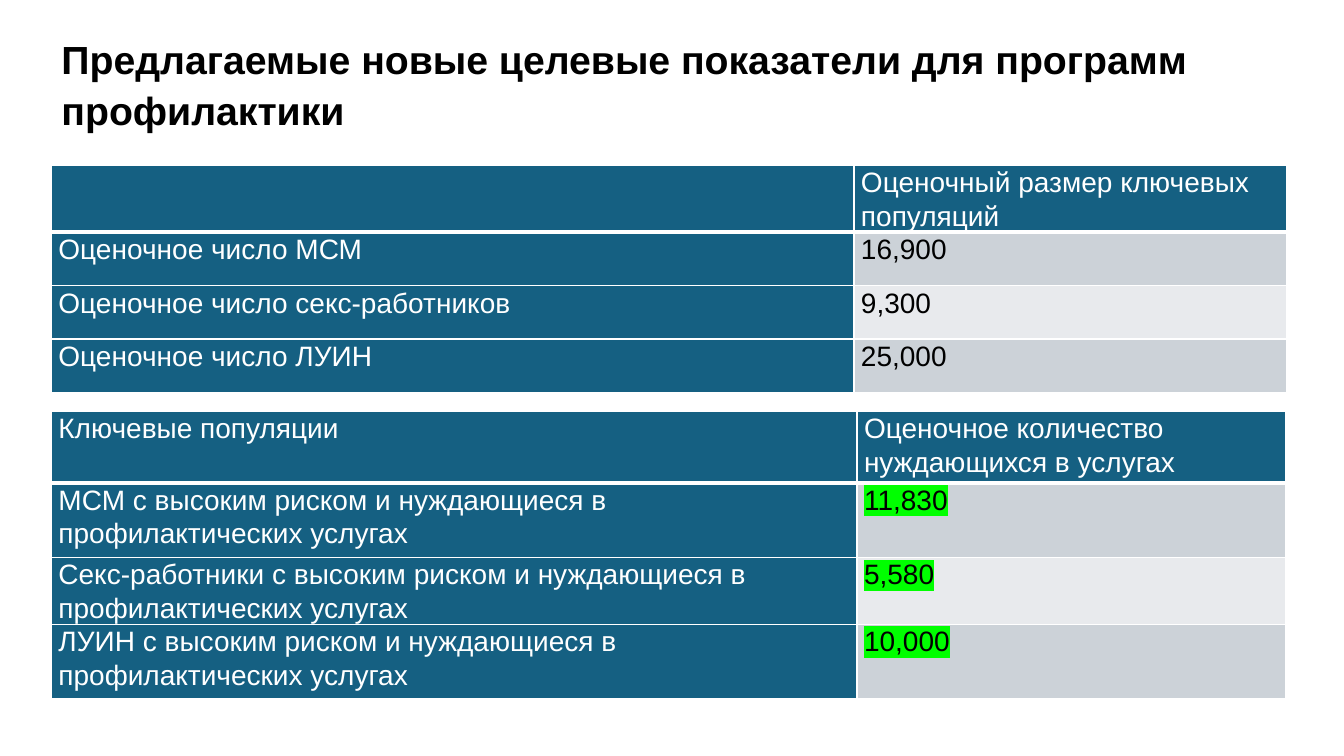
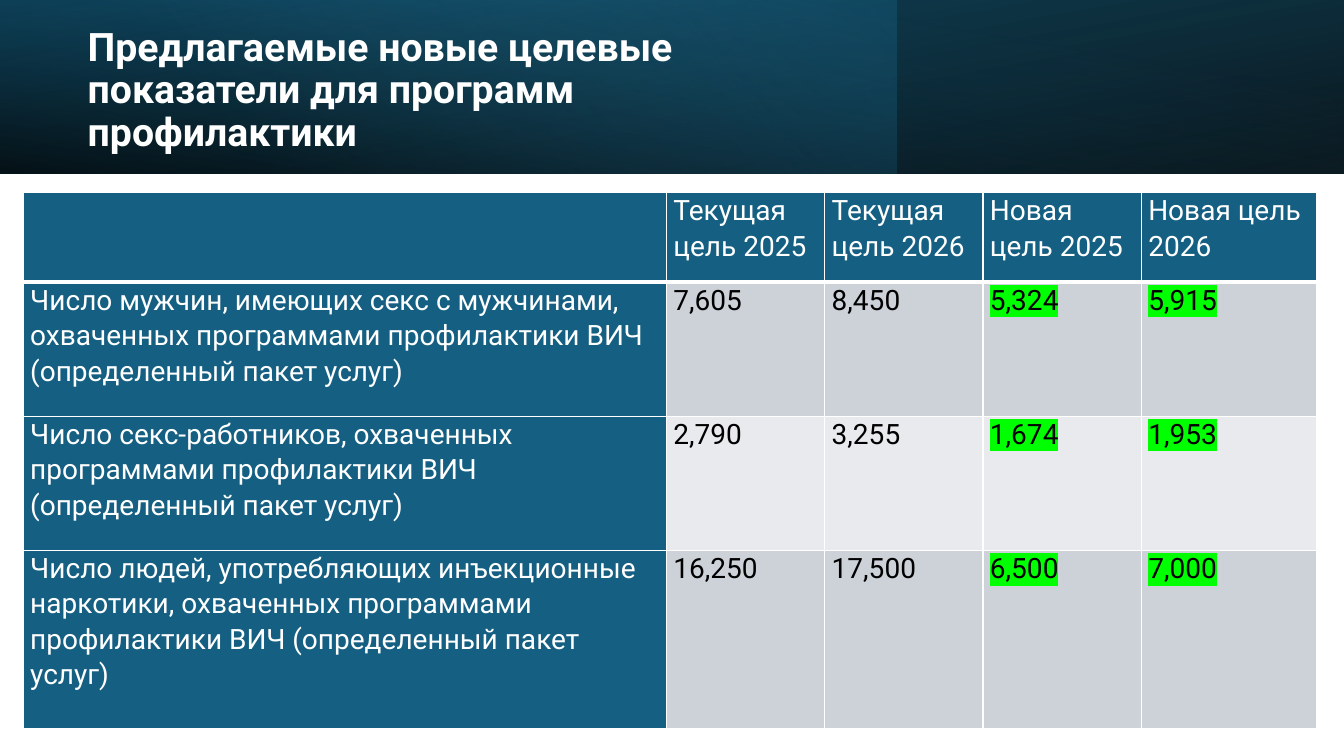
from pptx import Presentation
from pptx.dml.color import RGBColor
from pptx.enum.shapes import MSO_SHAPE
from pptx.enum.text import MSO_ANCHOR, MSO_AUTO_SIZE, PP_ALIGN
from pptx.oxml import parse_xml
from pptx.oxml.ns import nsdecls, qn
from pptx.util import Inches, Pt

WHITE = RGBColor(0xFF, 0xFF, 0xFF)
BLACK = RGBColor(0, 0, 0)
TEAL = RGBColor(0x15, 0x60, 0x82)
DEEP_TEAL = RGBColor(0x10, 0x48, 0x62)
SKY = RGBColor(0x46, 0xB1, 0xE1)
GREEN = RGBColor(0, 0xFF, 0)
BANDS = (RGBColor(0xCC, 0xD2, 0xD8), RGBColor(0xE8, 0xEA, 0xED))

TITLE = "Предлагаемые новые целевые показатели для программ профилактики"
WIDTH, BAND_HEIGHT = 13.33, 1.72
CELL_MARGINS = {"margin_left": Inches(0.07), "margin_right": Inches(0.07),
                "margin_top": 0, "margin_bottom": 0}

SIZE_ROWS = [
    ("", "Оценочный размер ключевых популяций"),
    ("Оценочное число МСМ", "16,900"),
    ("Оценочное число секс-работников", "9,300"),
    ("Оценочное число ЛУИН", "25,000"),
]
NEED_ROWS = [
    ("Ключевые популяции", "Оценочное количество нуждающихся в услугах"),
    ("МСМ с высоким риском и нуждающиеся в профилактических услугах", "11,830"),
    ("Секс-работники с высоким риском и нуждающиеся в профилактических услугах", "5,580"),
    ("ЛУИН с высоким риском и нуждающиеся в профилактических услугах", "10,000"),
]
TARGET_ROWS = [
    ("", "Текущая цель 2025", "Текущая цель 2026", "Новая цель 2025", "Новая цель 2026"),
    ("Число мужчин, имеющих секс с мужчинами, охваченных программами "
     "профилактики ВИЧ (определенный пакет услуг)", "7,605", "8,450", "5,324", "5,915"),
    ("Число секс-работников, охваченных программами профилактики ВИЧ "
     "(определенный пакет услуг)", "2,790", "3,255", "1,674", "1,953"),
    ("Число людей, употребляющих инъекционные наркотики, охваченных программами "
     "профилактики ВИЧ (определенный пакет услуг)", "16,250", "17,500", "6,500", "7,000"),
]


def set_attrs(obj, values):
    for name, value in values.items():
        setattr(obj, name, value)


def set_font(r, font, size, color, bold=False):
    set_attrs(r.font, {"name": font, "size": Pt(size), "bold": bold})
    r.font.color.rgb = color


def add_title(s, box, font, color, spacing):
    title = s.shapes.title
    set_attrs(title, dict(zip(("left", "top", "width", "height"), map(Inches, box))))
    tf = title.text_frame
    set_attrs(tf, {"text": TITLE, "word_wrap": True, "auto_size": MSO_AUTO_SIZE.NONE,
                   "vertical_anchor": MSO_ANCHOR.MIDDLE})
    p = tf.paragraphs[0]
    set_attrs(p, {"alignment": PP_ALIGN.LEFT, "line_spacing": spacing, "space_after": Pt(8)})
    set_font(p.runs[0], font, 28, color, bold=True)


def add_gradient_band(s, width, stops, angle, flip=False, rotation=0):
    """Add a top band; each stop is (position %, colour, opacity %)."""
    sp = s.shapes.add_shape(MSO_SHAPE.RECTANGLE, 0, 0, Inches(width), Inches(BAND_HEIGHT))
    sp.rotation = rotation
    sp.shadow.inherit = False
    sp.line.fill.background()
    spPr = sp._element.spPr
    if flip:
        spPr.find(qn("a:xfrm")).set("flipH", "1")
    gs = "".join(
        f'<a:gs pos="{pos * 1000}"><a:srgbClr val="{color}">'
        f'<a:alpha val="{opacity * 1000}"/></a:srgbClr></a:gs>'
        for pos, color, opacity in stops)
    spPr.find(qn("a:prstGeom")).addnext(parse_xml(
        f'<a:gradFill {nsdecls("a")} rotWithShape="1"><a:gsLst>{gs}</a:gsLst>'
        f'<a:lin ang="{angle * 60000}" scaled="0"/></a:gradFill>'))


def set_borders(cell, top, bottom):
    tcPr = cell._tc.get_or_add_tcPr()
    for i, (side, width) in enumerate((("L", 1), ("R", 1), ("T", top), ("B", bottom))):
        tcPr.insert(i, parse_xml(
            f'<a:ln{side} {nsdecls("a")} w="{Pt(width)}"><a:solidFill>'
            f'<a:srgbClr val="{WHITE}"/></a:solidFill></a:ln{side}>'))


def highlight(r):
    fill = r._r.get_or_add_rPr().find(qn("a:solidFill"))
    fill.addnext(parse_xml(
        f'<a:highlight {nsdecls("a")}><a:srgbClr val="{GREEN}"/></a:highlight>'))


def add_data_table(s, left, top, widths, heights, rows, font, new_cols=()):
    """Add a table with a teal header row and column; new_cols are highlighted."""
    table = s.shapes.add_table(len(rows), len(widths), Inches(left), Inches(top),
                               Inches(sum(widths)), Inches(sum(heights))).table
    set_attrs(table, {"first_row": False, "horz_banding": False})
    for col, width in zip(table.columns, widths):
        col.width = Inches(width)
    for i, (values, height) in enumerate(zip(rows, heights)):
        table.rows[i].height = Inches(height)
        for j, value in enumerate(values):
            cell = table.cell(i, j)
            is_head = i == 0 or j == 0
            set_attrs(cell, CELL_MARGINS)
            cell.fill.solid()
            cell.fill.fore_color.rgb = TEAL if is_head else BANDS[(i - 1) % 2]
            set_borders(cell, top=3 if i == 1 else 1, bottom=3 if i == 0 else 1)
            if not value:
                continue
            p = cell.text_frame.paragraphs[0]
            p.line_spacing = 1.07
            r = p.add_run()
            r.text = value
            set_font(r, font, 20, WHITE if is_head else BLACK)
            if j in new_cols and not is_head:
                highlight(r)


def add_population_slide(prs):
    s = prs.slides.add_slide(prs.slide_layouts[5])
    add_title(s, (0.51, 0.4, 12.24, 0.84), "Arial", BLACK, 1.07)
    add_data_table(s, 0.51, 4.08, (7.99, 4.25), (0.71, 0.74, 0.6, 0.74),
                   NEED_ROWS, "Arial", new_cols=(1,))
    add_data_table(s, 0.51, 1.64, (7.96, 4.29), (0.65, 0.53, 0.53, 0.53),
                   SIZE_ROWS, "Arial")


def add_target_slide(prs):
    s = prs.slides.add_slide(prs.slide_layouts[5])
    add_gradient_band(s, WIDTH, ((0, BLACK, 96), (100, DEEP_TEAL, 100)), 100,
                      flip=True, rotation=180)
    add_gradient_band(s, 8.89, ((0, TEAL, 41), (74, SKY, 0)), 140)
    add_gradient_band(s, WIDTH, ((0, BLACK, 63), (78, TEAL, 15)), 260, flip=True)
    title = s.shapes.title._element
    title.getparent().append(title)
    add_title(s, (0.77, 0.27, 7.72, 1.27), "Roboto", WHITE, 0.9)
    add_data_table(s, 0.23, 1.91, (6.38, 1.57, 1.57, 1.57, 1.74),
                   (0.89, 1.33, 1.33, 1.77), TARGET_ROWS, "Roboto", new_cols=(3, 4))


def main():
    prs = Presentation()
    set_attrs(prs, {"slide_width": Inches(WIDTH), "slide_height": Inches(7.5)})
    add_population_slide(prs)
    add_target_slide(prs)
    prs.save("out.pptx")


if __name__ == "__main__":
    main()
